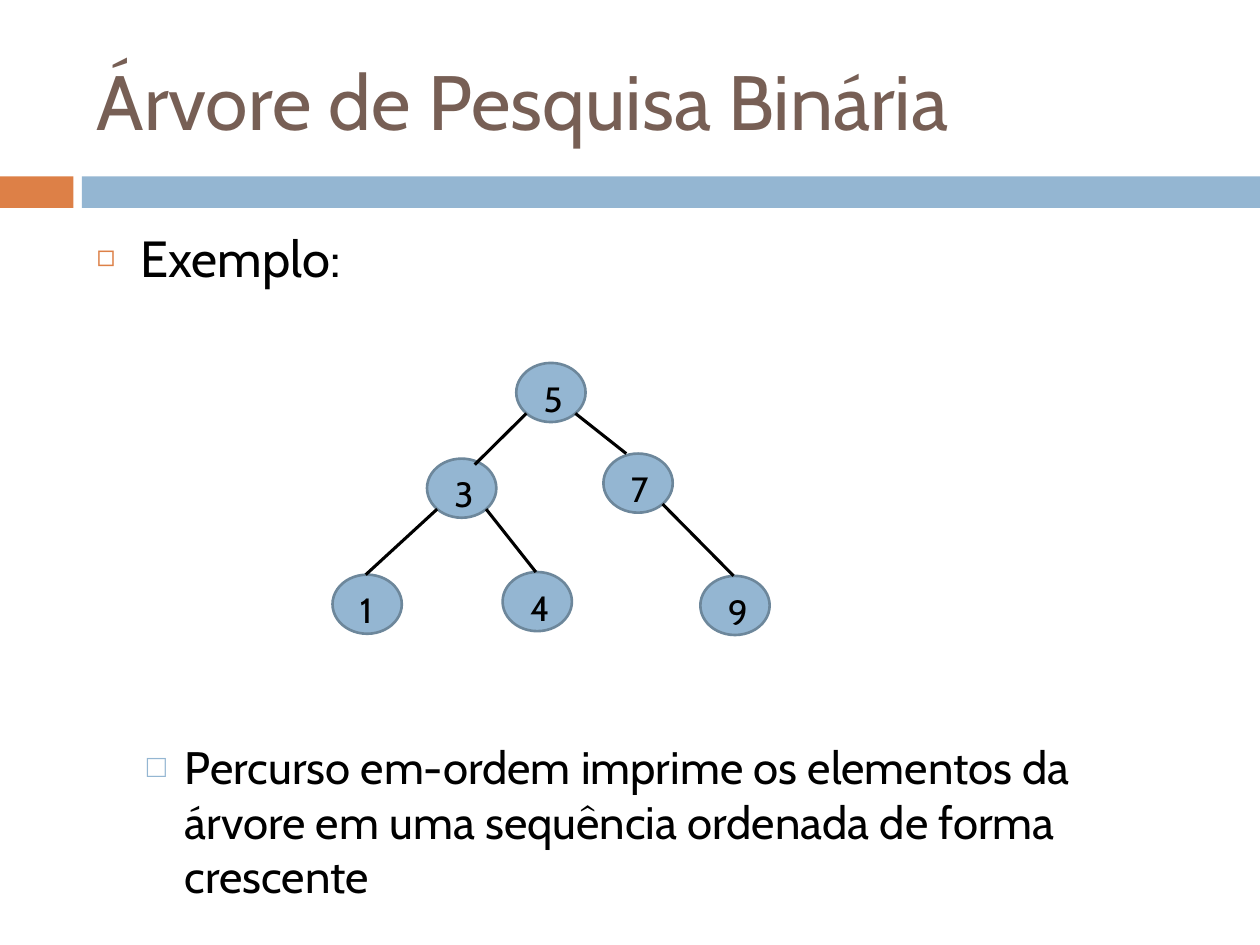
from lxml.etree import SubElement
from pptx import Presentation
from pptx.dml.color import RGBColor
from pptx.enum.shapes import MSO_CONNECTOR as Connector, MSO_SHAPE as Shape
from pptx.enum.text import MSO_ANCHOR as Anchor, MSO_AUTO_SIZE as AutoSize, PP_ALIGN as Align
from pptx.oxml.ns import qn
from pptx.util import Pt

COLORS = {"title": "775F55", "text": "000000", "orange": "DD8047",
          "blue": "94B6D2", "outline": "6D879B"}
FONT = "Cabin"
NODE_W, NODE_H = 39.6, 33.8
DIAGONAL = 0.5 ** 0.5 / 2  # offset of a 45° ellipse point, as a share of its size

# Node positions relative to the tree's box
NODES = {"5": (105, 0), "3": (54, 54.7), "7": (154.8, 51.8),
         "1": (0, 121), "4": (97.2, 119.5), "9": (210.2, 121.7)}
# Parent, child, side of the parent, end point as shares of the child's size
EDGES = [("5", "3", -1, 0.69, 0.1), ("3", "1", -1, 0.48, 0), ("3", "4", 1, 0.48, 0),
         ("5", "7", 1, 0.33, 0), ("7", "9", 1, 0.48, 0)]


def rgb(name):
    return RGBColor.from_string(COLORS[name])


def place(sp, box):
    for name, value in zip(("left", "top", "width", "height"), box):
        setattr(sp, name, Pt(value))


def write(p, text, size, color="text"):
    r = p.add_run()
    r.text = text
    for name, value in {"name": FONT, "size": Pt(size)}.items():
        setattr(r.font, name, value)
    r.font.color.rgb = rgb(color)


def add_filled(s, kind, box, color):
    sp = s.shapes.add_shape(kind, *map(Pt, box))
    sp.shadow.inherit = False
    sp.fill.solid()
    sp.fill.fore_color.rgb = rgb(color)
    sp.line.fill.background()
    return sp


def add_band(s, x, y, w, h):
    """Draw the two-colour divider below the title."""
    tab, gap = 42, 4.8
    add_filled(s, Shape.RECTANGLE, (x, y, tab, h), "orange")
    add_filled(s, Shape.RECTANGLE, (x + tab + gap, y, w - tab - gap, h), "blue")


def add_title(s, box, text):
    sp = s.shapes.title
    place(sp, box)
    tf = sp.text_frame
    for name, value in {"auto_size": AutoSize.NONE, "vertical_anchor": Anchor.MIDDLE}.items():
        setattr(tf, name, value)
    p = tf.paragraphs[0]
    p.alignment = Align.LEFT
    write(p, text, 44, "title")


def set_bullet(p, char, color, percent, margin, hang):
    pPr = p._p.get_or_add_pPr()
    pPr.set("marL", str(Pt(margin)))
    pPr.set("indent", str(-Pt(hang)))
    SubElement(SubElement(pPr, qn("a:buClr")), qn("a:srgbClr"), val=COLORS[color])
    SubElement(pPr, qn("a:buSzPct"), val=str(percent * 1000))
    SubElement(pPr, qn("a:buChar"), char=char)


def add_body(s, box, items):
    sp = s.placeholders[1]
    place(sp, box)
    tf = sp.text_frame
    tf.auto_size = AutoSize.NONE
    for i, (text, size, level, before, bullet) in enumerate(items):
        p = tf.add_paragraph() if i else tf.paragraphs[0]
        for name, value in {"level": level, "space_before": Pt(before)}.items():
            setattr(p, name, value)
        set_bullet(p, *bullet)
        write(p, text, size)


def add_node(s, x, y, key):
    sp = add_filled(s, Shape.OVAL, (x, y, NODE_W, NODE_H), "blue")
    sp.line.color.rgb = rgb("outline")
    sp.line.width = Pt(1.5)
    label = s.shapes.add_textbox(Pt(x + 8.6), Pt(y + 4.6), Pt(25.2), Pt(31.7))
    tf = label.text_frame
    for name, value in {"word_wrap": True, "auto_size": AutoSize.SHAPE_TO_FIT_TEXT}.items():
        setattr(tf, name, value)
    write(tf.paragraphs[0], key, 20)


def add_edge(s, start, end):
    line = s.shapes.add_connector(Connector.STRAIGHT, *map(Pt, start + end))
    line.line.color.rgb = rgb("text")
    line.line.width = Pt(1.75)
    SubElement(line._element.spPr, qn("a:effectLst"))


def add_tree(s, x, y):
    for key, (dx, dy) in NODES.items():
        add_node(s, x + dx, y + dy, key)
    for parent, child, side, fx, fy in EDGES:
        px, py = NODES[parent]
        cx, cy = NODES[child]
        start = (x + px + NODE_W * (0.5 + side * DIAGONAL),
                 y + py + NODE_H * (0.5 + DIAGONAL))
        add_edge(s, start, (x + cx + NODE_W * fx, y + cy + NODE_H * fy))


def main():
    prs = Presentation()
    prs.slide_width, prs.slide_height = Pt(720), Pt(540)
    s = prs.slides.add_slide(prs.slide_layouts[1])
    add_band(s, 0, 100.8, 720, 18)
    add_title(s, (48, 18, 642, 78), "Árvore de Pesquisa Binária")
    add_body(s, (48, 126, 642, 388), [
        ("Exemplo:", 29, 0, 7, ("◻", "orange", 60, 25.2, 25.2)),
        ("Percurso em-ordem imprime os elementos da árvore em uma sequência "
         "ordenada de forma crescente", 26, 1, 258, ("□", "blue", 70, 50.4, 21.6)),
    ])
    add_tree(s, 190, 207.4)
    prs.save("out.pptx")


if __name__ == "__main__":
    main()
